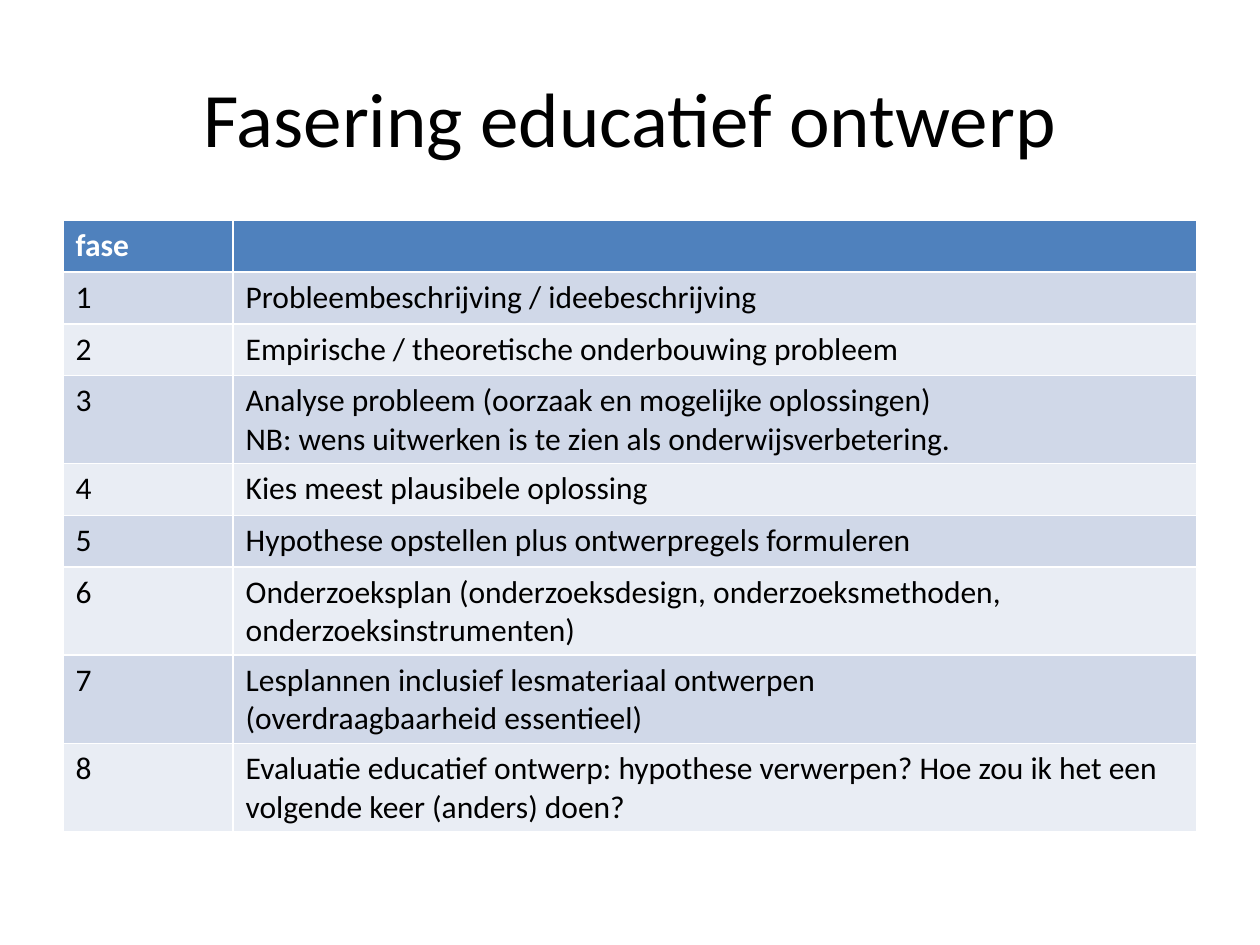
from pptx import Presentation
from pptx.dml.color import RGBColor
from pptx.enum.text import MSO_ANCHOR, PP_ALIGN
from pptx.util import Inches, Pt

BLACK = RGBColor(0x00, 0x00, 0x00)
WHITE = RGBColor(0xFF, 0xFF, 0xFF)
BLUE = RGBColor(0x4F, 0x81, 0xBD)
BANDS = [RGBColor(0xD0, 0xD8, 0xE8), RGBColor(0xE9, 0xED, 0xF4)]

HEAD = {"name": "Calibri", "size": Pt(44)}
LABEL = {"name": "Calibri", "size": Pt(18), "bold": True}
BODY = {"name": "Calibri", "size": Pt(18), "bold": False}

# One entry per phase; a line break starts a new paragraph
PHASES = [
    "Probleembeschrijving / ideebeschrijving",
    "Empirische / theoretische onderbouwing probleem",
    "Analyse probleem (oorzaak en mogelijke oplossingen)\n"
    "NB: wens uitwerken is te zien als onderwijsverbetering.",
    "Kies meest plausibele oplossing",
    "Hypothese opstellen plus ontwerpregels formuleren",
    "Onderzoeksplan (onderzoeksdesign, onderzoeksmethoden, "
    "onderzoeksinstrumenten)",
    "Lesplannen inclusief lesmateriaal ontwerpen\n"
    "(overdraagbaarheid essentieel)",
    "Evaluatie educatief ontwerp: hypothese verwerpen? "
    "Hoe zou ik het een volgende keer (anders) doen?",
]


def write(frame, text, look, color):
    """Fill a text frame and format each paragraph."""
    frame.text = text
    for para in frame.paragraphs:
        for key, value in look.items():
            setattr(para.font, key, value)
        para.font.color.rgb = color


def add_title(slide, left, top, width, height):
    frame = slide.shapes.add_textbox(left, top, width, height).text_frame
    frame.word_wrap = True
    frame.vertical_anchor = MSO_ANCHOR.MIDDLE
    write(frame, "Fasering educatief ontwerp", HEAD, BLACK)
    frame.paragraphs[0].alignment = PP_ALIGN.CENTER


def add_phases(slide, left, top, width, row):
    data = [("fase", "")]
    data += [(str(num), text) for num, text in enumerate(PHASES, 1)]
    table = slide.shapes.add_table(
        len(data), 2, left, top, width, row * len(data)).table

    # Narrow number column, the rest for the description
    first = int(width * 0.15)
    table.columns[0].width = first
    table.columns[1].width = width - first

    # Header row, then alternating bands
    for r, texts in enumerate(data):
        fill = BANDS[(r - 1) % 2] if r else BLUE
        look, color = (BODY, BLACK) if r else (LABEL, WHITE)
        for c, text in enumerate(texts):
            cell = table.cell(r, c)
            cell.fill.solid()
            cell.fill.fore_color.rgb = fill
            write(cell.text_frame, text, look, color)


def main():
    deck = Presentation()
    deck.slide_width, deck.slide_height = Inches(10), Inches(7.5)
    slide = deck.slides.add_slide(deck.slide_layouts[6])
    add_title(slide, Inches(0.5), Inches(0.3), Inches(9), Inches(1.25))
    add_phases(slide, Inches(0.5), Inches(1.75), Inches(9), Inches(0.41))
    deck.save("out.pptx")


if __name__ == "__main__":
    main()
